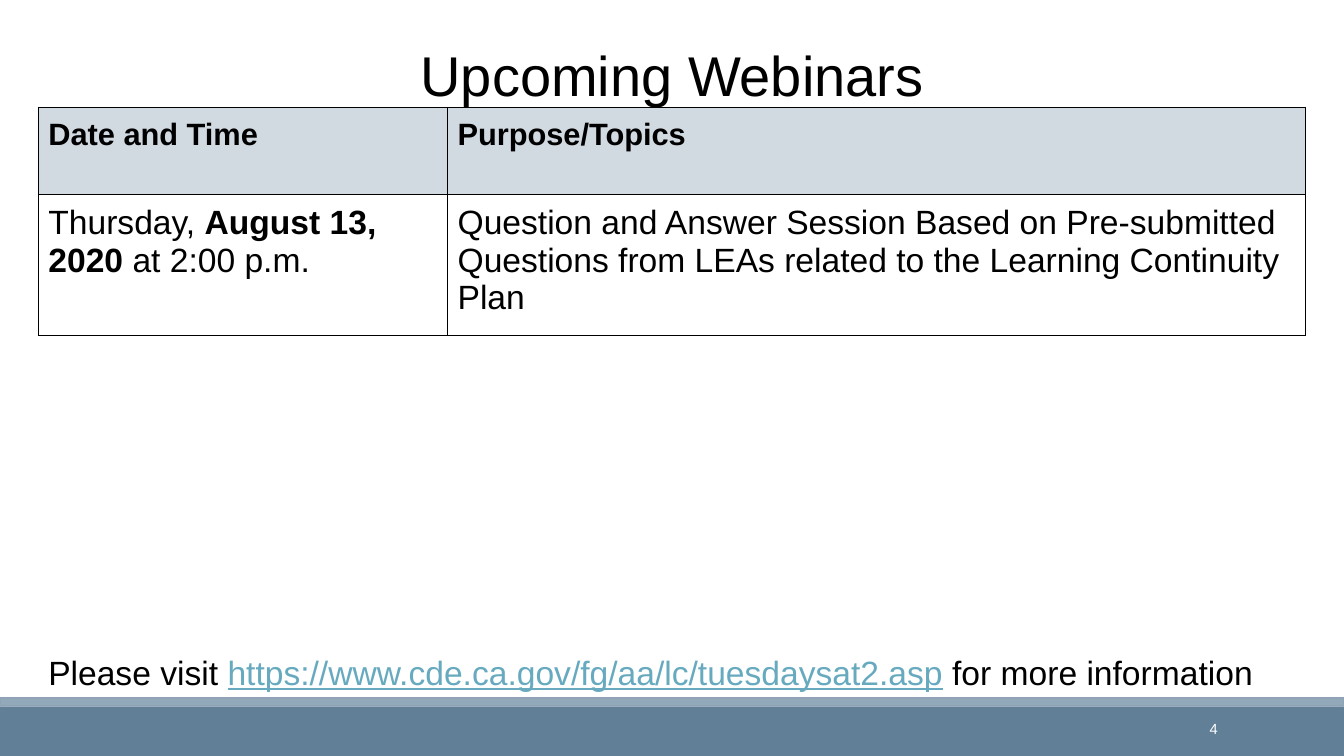
"""Build the Upcoming Webinars slide with its schedule table."""
from lxml import etree
from pptx import Presentation
from pptx.dml.color import RGBColor
from pptx.enum.shapes import MSO_SHAPE
from pptx.enum.text import MSO_ANCHOR, PP_ALIGN
from pptx.oxml.ns import qn
from pptx.util import Pt

RECTANGLE = MSO_SHAPE.RECTANGLE
TOP, MIDDLE, BOTTOM = MSO_ANCHOR.TOP, MSO_ANCHOR.MIDDLE, MSO_ANCHOR.BOTTOM
LEFT, CENTER, RIGHT = PP_ALIGN.LEFT, PP_ALIGN.CENTER, PP_ALIGN.RIGHT
BLACK, WHITE, HEADER, LINK = "000000", "FFFFFF", "D1D9E1", "67AABF"
MARGIN = 7.2


def color(value):
    return RGBColor.from_string(value)


class Page:
    """Hold the style and the current slide."""

    font = "Arial"

    def __init__(self, deck):
        self.shapes = deck.slides.add_slide(deck.slide_layouts[6]).shapes

    def bar(self, left, top, width, height, fill, line=None):
        bar = self.shapes.add_shape(RECTANGLE, Pt(left), Pt(top), Pt(width), Pt(height))
        bar.shadow.inherit = False
        bar.fill.solid()
        bar.fill.fore_color.rgb = color(fill)
        if line:
            bar.line.color.rgb = color(line)
            bar.line.width = Pt(1.25)
        else:
            bar.line.fill.background()

    def fill_paragraph(self, para, spans, size, ink=BLACK, bold=None):
        para.font.name = self.font
        para.font.size = Pt(size)
        para.font.color.rgb = color(ink)
        para.font.bold = bold
        for text, style in spans:
            span = para.add_run()
            span.text = text
            if style == "bold":
                span.font.bold = True
            elif style == "link":
                span.font.underline = True
                span.font.color.rgb = color(LINK)

    def text(self, left, top, width, height, spans, size, ink=BLACK,
             align=LEFT, anchor=TOP, inset=3.6, spacing=None):
        box = self.shapes.add_textbox(Pt(left), Pt(top), Pt(width), Pt(height))
        frame = box.text_frame
        frame.word_wrap = True
        frame.vertical_anchor = anchor
        frame.margin_left = frame.margin_right = Pt(MARGIN)
        frame.margin_top = frame.margin_bottom = Pt(inset)
        para = frame.paragraphs[0]
        para.alignment = align
        para.line_spacing = spacing
        self.fill_paragraph(para, spans, size, ink)

    def border(self, cell):
        properties = cell._tc.get_or_add_tcPr()
        for position, side in enumerate(("a:lnL", "a:lnR", "a:lnT", "a:lnB")):
            line = etree.Element(qn(side), w=str(Pt(1)))
            fill = etree.SubElement(line, qn("a:solidFill"))
            etree.SubElement(fill, qn("a:srgbClr"), val=BLACK)
            properties.insert(position, line)

    def table(self, left, top, widths, heights, rows):
        frame = self.shapes.add_table(len(rows), len(widths), Pt(left), Pt(top),
                                      Pt(sum(widths)), Pt(sum(heights)))
        table = frame.table
        table.horz_banding = table.first_row = False
        for column, width in zip(table.columns, widths):
            column.width = Pt(width)
        for row, height in zip(table.rows, heights):
            row.height = Pt(height)
        for row_index, row in enumerate(rows):
            is_header = row_index == 0
            for column_index, spans in enumerate(row):
                cell = table.cell(row_index, column_index)
                cell.margin_left = cell.margin_right = Pt(MARGIN)
                cell.margin_top = cell.margin_bottom = Pt(MARGIN)
                if is_header:
                    cell.fill.solid()
                    cell.fill.fore_color.rgb = color(HEADER)
                else:
                    cell.fill.background()
                self.border(cell)
                self.fill_paragraph(cell.text_frame.paragraphs[0], spans,
                                    22 if is_header else 24, bold=is_header)


def main():
    deck = Presentation()
    deck.slide_width, deck.slide_height = Pt(960), Pt(540)
    page = Page(deck)
    page.bar(0, 504.5, 960, 35.5, "618097")
    page.bar(0, 498.8, 960, 5.2, "92A9B9", "8FA2B6")
    page.text(84, 12.2, 792, 68.4, [("Upcoming Webinars", None)], 40,
              align=CENTER, anchor=BOTTOM, spacing=0.85)
    page.table(27.4, 76.8, [292.3, 612.7], [62, 83.5], [
        [[("Date and Time", None)], [("Purpose/Topics", None)]],
        [[("Thursday, ", None), ("August 13, 2020 ", "bold"), ("at 2:00 p.m.", None)],
         [("Question and Answer Session Based on Pre-submitted Questions from LEAs "
           "related to the Learning Continuity Plan", None)]],
    ])
    page.text(27.4, 458.6, 905, 36.7, [
        ("Please visit ", None),
        ("https://www.cde.ca.gov/fg/aa/lc/tuesdaysat2.asp", "link"),
        (" for more information", None),
    ], 24, inset=MARGIN)
    page.text(774, 506.2, 103, 28.8, [("4", None)], 10.5, WHITE,
              align=RIGHT, anchor=MIDDLE)
    deck.save("out.pptx")


if __name__ == "__main__":
    main()
